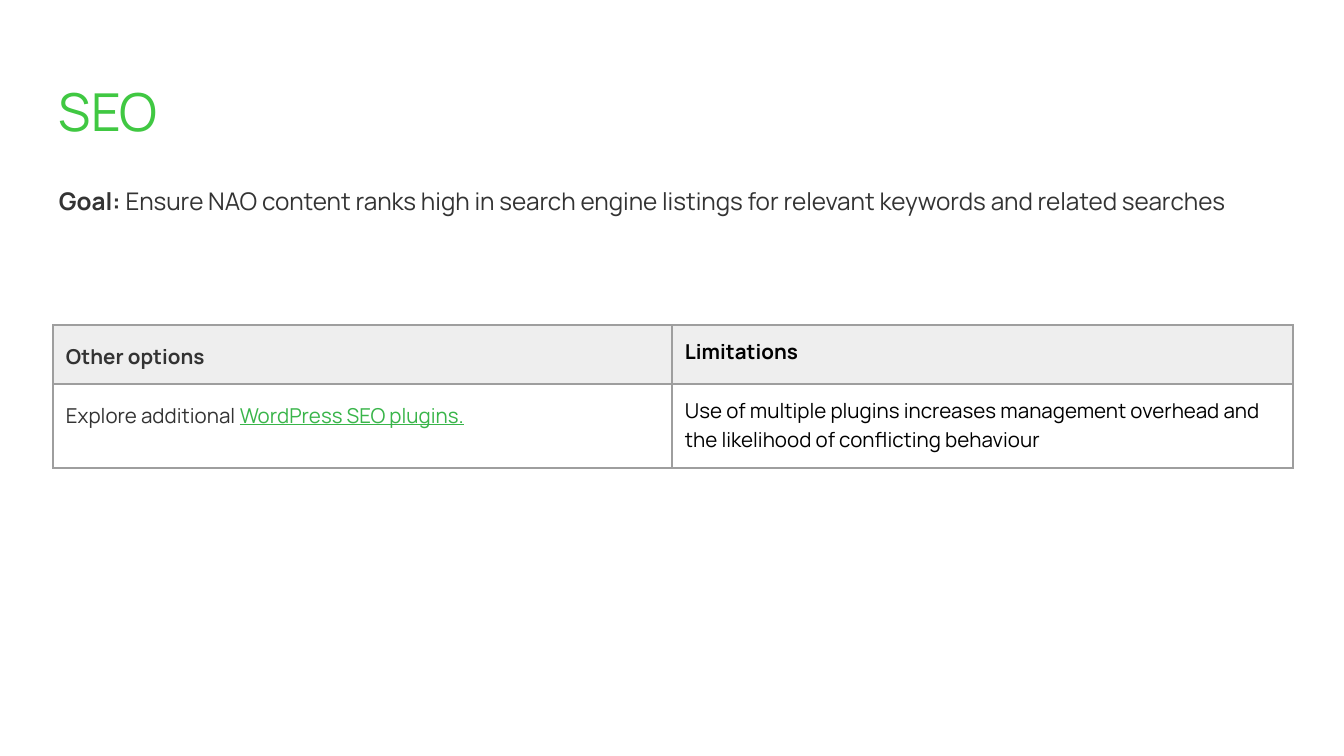
from pptx import Presentation
from pptx.dml.color import RGBColor
from pptx.enum.text import MSO_ANCHOR, MSO_AUTO_SIZE, PP_ALIGN
from pptx.oxml import parse_xml
from pptx.oxml.ns import nsdecls
from pptx.util import Emu, Pt

GREEN, LINK_GREEN, TEXT, BLACK = "40C842", "39B54A", "333333", "000000"
HEADER_FILL, BODY_FILL, BORDER = "EEEEEE", "FFFFFF", "9E9E9E"


def px(length):
    return Emu(round(length * 914400 / 134.4))


def color(value):
    return RGBColor.from_string(value)


class SlideBuilder:
    font = "Manrope"
    inset = 13

    def __init__(self, presentation):
        self.slide = presentation.slides.add_slide(presentation.slide_layouts[5])

    def add_runs(self, frame, runs, size, line_spacing=1.0):
        paragraph = frame.paragraphs[0]
        paragraph.alignment = PP_ALIGN.LEFT
        paragraph.line_spacing = line_spacing
        paragraph.space_before = Pt(0)
        for text, fill, bold, underline in runs:
            run = paragraph.add_run()
            run.text = text
            run.font.name = self.font
            run.font.size = Pt(size)
            run.font.bold = bold
            run.font.underline = underline
            run.font.color.rgb = color(fill)

    def set_frame(self, shape, runs, size, line_spacing=1.0):
        frame = shape.text_frame
        frame.word_wrap = True
        frame.auto_size = MSO_AUTO_SIZE.NONE
        frame.vertical_anchor = MSO_ANCHOR.TOP
        frame.margin_left = frame.margin_right = px(self.inset)
        frame.margin_top = frame.margin_bottom = px(self.inset)
        self.add_runs(frame, runs, size, line_spacing)

    def title(self, text, left, top, width, height):
        shape = self.slide.shapes.title
        shape.left, shape.top = px(left), px(top)
        shape.width, shape.height = px(width), px(height)
        self.set_frame(shape, [(text, GREEN, False, False)], 28)

    def text(self, runs, size, left, top, width, height):
        shape = self.slide.shapes.add_textbox(px(left), px(top), px(width), px(height))
        self.set_frame(shape, runs, size, 1.15)

    def border(self, cell):
        properties = cell._tc.get_or_add_tcPr()
        for index, side in enumerate(("lnL", "lnR", "lnT", "lnB")):
            properties.insert(index, parse_xml(
                f'<a:{side} {nsdecls("a")} w="{Pt(0.75)}"><a:solidFill>'
                f'<a:srgbClr val="{BORDER}"/></a:solidFill></a:{side}>'))

    def table(self, rows, size, left, top, widths, heights):
        shape = self.slide.shapes.add_table(
            len(rows), len(widths), px(left), px(top), px(sum(widths)), px(sum(heights)))
        table = shape.table
        for column, width in zip(table.columns, widths):
            column.width = px(width)
        for row, height in zip(table.rows, heights):
            row.height = px(height)
        for row_index, row in enumerate(rows):
            for column_index, runs in enumerate(row):
                cell = table.cell(row_index, column_index)
                cell.margin_left = cell.margin_right = px(self.inset)
                cell.margin_top = cell.margin_bottom = px(self.inset)
                cell.vertical_anchor = MSO_ANCHOR.TOP
                cell.fill.solid()
                cell.fill.fore_color.rgb = color(BODY_FILL if row_index else HEADER_FILL)
                self.border(cell)
                self.add_runs(cell.text_frame, runs, size, 1.0 if column_index else 1.15)


def main():
    presentation = Presentation()
    presentation.slide_width = px(1344)
    presentation.slide_height = px(756)
    builder = SlideBuilder(presentation)
    builder.title("SEO", 46, 66, 1252, 84)
    builder.text([
        ("Goal: ", TEXT, True, False),
        ("Ensure NAO content ranks high in search engine listings for relevant keywords "
         "and related searches", TEXT, False, False),
    ], 13, 46, 169, 1252, 503)
    builder.table([
        [[("Other options", TEXT, True, False)],
         [("Limitations", BLACK, True, False)]],
        [[("Explore additional ", TEXT, False, False),
          ("WordPress SEO plugins.", LINK_GREEN, False, True)],
         [("Use of multiple plugins increases management overhead and the likelihood "
           "of conflicting behaviour", BLACK, False, False)]],
    ], 11, 53, 325, [619, 621], [59, 84])
    presentation.save("out.pptx")


if __name__ == "__main__":
    main()
